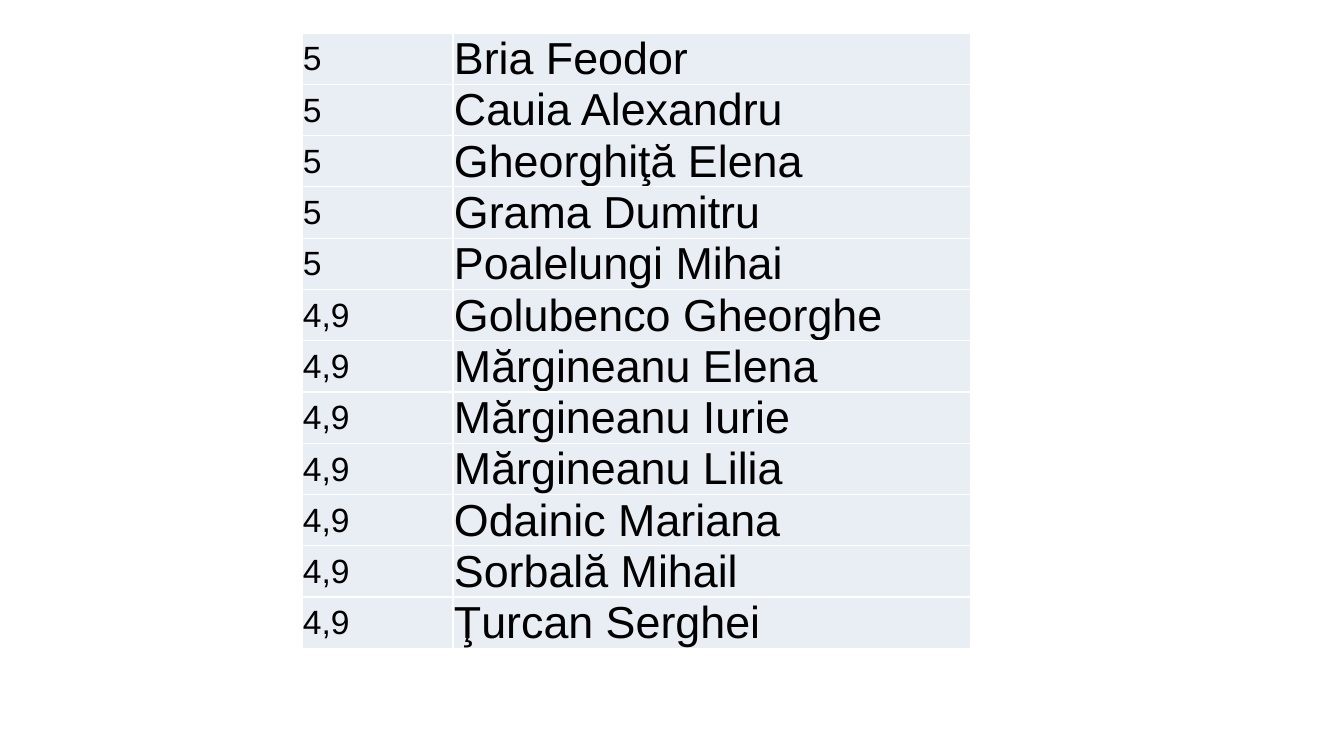
from lxml.etree import SubElement
from pptx import Presentation
from pptx.dml.color import RGBColor
from pptx.enum.text import MSO_ANCHOR
from pptx.oxml.ns import qn
from pptx.util import Pt

# Content: score and name
SCORES = [
    ("5", "Bria Feodor"),
    ("5", "Cauia Alexandru"),
    ("5", "Gheorghiţă Elena"),
    ("5", "Grama Dumitru"),
    ("5", "Poalelungi Mihai"),
    ("4,9", "Golubenco Gheorghe"),
    ("4,9", "Mărgineanu Elena"),
    ("4,9", "Mărgineanu Iurie"),
    ("4,9", "Mărgineanu Lilia"),
    ("4,9", "Odainic Mariana"),
    ("4,9", "Sorbală Mihail"),
    ("4,9", "Ţurcan Serghei"),
]

# Layout in px, text sizes in points
SLIDE_WIDTH, SLIDE_HEIGHT = 1344, 756
TABLE_LEFT, TABLE_TOP = 302, 33
COLUMN_WIDTHS = (151, 518)
TEXT_SIZES = (24, 32)
ROW_HEIGHT = 51
CELL_MARGIN = 1

FONT = "Arial"
BLACK = RGBColor(0x00, 0x00, 0x00)
WHITE = RGBColor(0xFF, 0xFF, 0xFF)
PALE_BLUE = RGBColor(0xE9, 0xED, 0xF4)


def px(length):
    return round(length * 914400 / 100.8)


def add_borders(cell, color):
    properties = cell._tc.get_or_add_tcPr()
    for side in ("a:lnL", "a:lnR", "a:lnT", "a:lnB"):
        line = SubElement(properties, qn(side), w=str(Pt(1)))
        fill = SubElement(line, qn("a:solidFill"))
        SubElement(fill, qn("a:srgbClr"), val=str(color))


def format_cell(cell, text, size):
    add_borders(cell, WHITE)
    cell.fill.solid()
    cell.fill.fore_color.rgb = PALE_BLUE
    cell.vertical_anchor = MSO_ANCHOR.MIDDLE
    cell.margin_left = cell.margin_right = cell.margin_top = px(CELL_MARGIN)
    cell.margin_bottom = 0
    cell.text = text
    font = cell.text_frame.paragraphs[0].font
    font.name, font.size, font.color.rgb = FONT, Pt(size), BLACK


def main():
    deck = Presentation()
    deck.slide_width, deck.slide_height = px(SLIDE_WIDTH), px(SLIDE_HEIGHT)
    page = deck.slides.add_slide(deck.slide_layouts.get_by_name("Blank"))

    # Score table
    table = page.shapes.add_table(
        len(SCORES), len(COLUMN_WIDTHS), px(TABLE_LEFT), px(TABLE_TOP),
        px(sum(COLUMN_WIDTHS)), px(ROW_HEIGHT * len(SCORES))).table
    table.first_row = table.horz_banding = False
    for column, width in zip(table.columns, COLUMN_WIDTHS):
        column.width = px(width)
    for row, texts in zip(table.rows, SCORES):
        row.height = px(ROW_HEIGHT)
        for cell, text, size in zip(row.cells, texts, TEXT_SIZES):
            format_cell(cell, text, size)

    deck.save("out.pptx")


if __name__ == "__main__":
    main()
